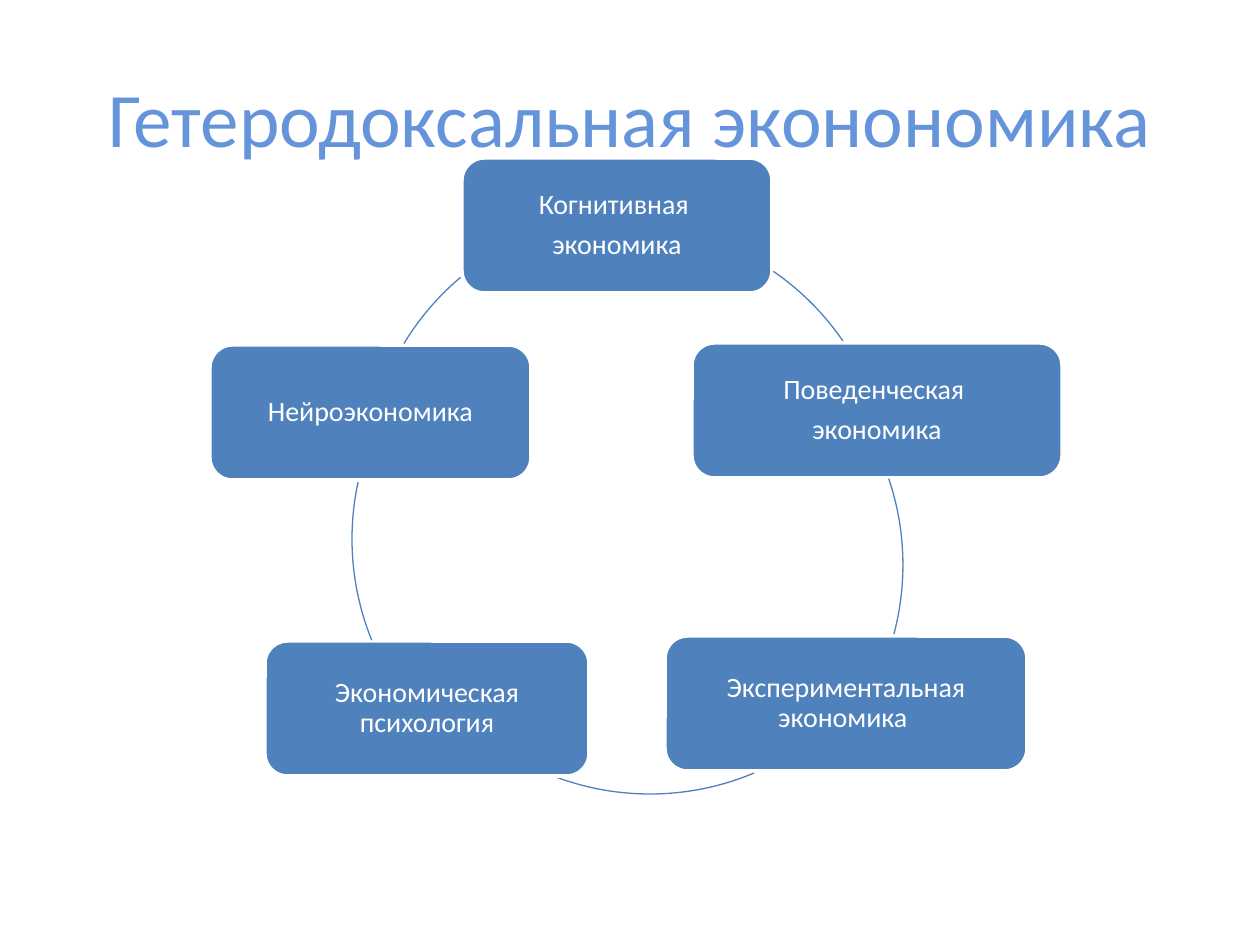
from dataclasses import dataclass

from pptx import Presentation
from pptx import util as u
from pptx.dml.color import RGBColor
from pptx.enum import shapes, text

SCALE = 914400 / 126
BLUE = "4F81BD"
WHITE = "FFFFFF"
BOX_HEIGHT = 135
RING = 538
INSET = 15


@dataclass
class Box:
    left: int
    top: int
    width: int
    lines: list[str]


@dataclass
class Arc:
    left: int
    top: int
    start: float
    end: float


BOXES = [
    Box(462, 158, 310, ["Когнитивная ", "экономика"]),
    Box(692, 343, 370, ["Поведенческая ", "экономика"]),
    Box(665, 636, 362, ["Экспериментальная экономика "]),
    Box(265, 641, 324, ["Экономическая психология"]),
    Box(210, 345, 321, ["Нейроэкономика"]),
]
ARCS = [
    Arc(352, 224, 304.5, 325.9),
    Arc(365, 296, 341.3, 15),
    Arc(381, 256, 67.2, 110.5),
    Arc(352, 270, 157.9, 192.3),
    Arc(365, 214, 211.2, 229.9),
]


def px(n: int) -> u.Emu:
    return u.Emu(round(n * SCALE))


def color(value: str) -> RGBColor:
    return RGBColor.from_string(value)


def write(tf, lines: list[str], *, size: int, fill: str,
          spacing: float = 1.0, after: float = 0) -> None:
    tf.word_wrap = True
    tf.vertical_anchor = text.MSO_ANCHOR.MIDDLE
    for i, line in enumerate(lines):
        p = tf.add_paragraph() if i else tf.paragraphs[0]
        p.alignment = text.PP_ALIGN.CENTER
        p.line_spacing = spacing
        p.space_before = u.Pt(0)
        p.space_after = u.Pt(after)
        r = p.add_run()
        r.text = line
        r.font.name = "Calibri"
        r.font.size = u.Pt(size)
        r.font.color.rgb = color(fill)


def draw_box(s, box: Box) -> None:
    sp = s.shapes.add_shape(shapes.MSO_SHAPE.ROUNDED_RECTANGLE,
                            px(box.left), px(box.top), px(box.width), px(BOX_HEIGHT))
    sp.shadow.inherit = False
    sp.fill.solid()
    sp.fill.fore_color.rgb = color(BLUE)
    sp.line.color.rgb = color(WHITE)
    sp.line.width = u.Pt(2)
    tf = sp.text_frame
    tf.margin_left = tf.margin_right = tf.margin_top = tf.margin_bottom = px(INSET)
    write(tf, box.lines, size=16, fill=WHITE, spacing=0.9, after=5.6)


def draw_arc(s, arc: Arc) -> None:
    sp = s.shapes.add_shape(shapes.MSO_SHAPE.ARC,
                            px(arc.left), px(arc.top), px(RING), px(RING))
    sp.shadow.inherit = False
    sp.fill.background()
    sp.line.color.rgb = color(BLUE)
    sp.line.width = u.Pt(0.75)
    for i, angle in enumerate((arc.start, arc.end)):
        sp.adjustments[i] = angle * 0.6


def main() -> None:
    prs = Presentation()
    prs.slide_width, prs.slide_height = px(1260), px(945)
    s = prs.slides.add_slide(prs.slide_layouts[5])

    title = s.shapes.title
    title.left, title.top = px(63), px(38)
    title.width, title.height = px(1134), px(158)
    write(title.text_frame, ["Гетеродоксальная эконономика"], size=44, fill="6594DA")

    for box, arc in zip(BOXES, ARCS):
        draw_box(s, box)
        draw_arc(s, arc)

    prs.save("out.pptx")


if __name__ == "__main__":
    main()
